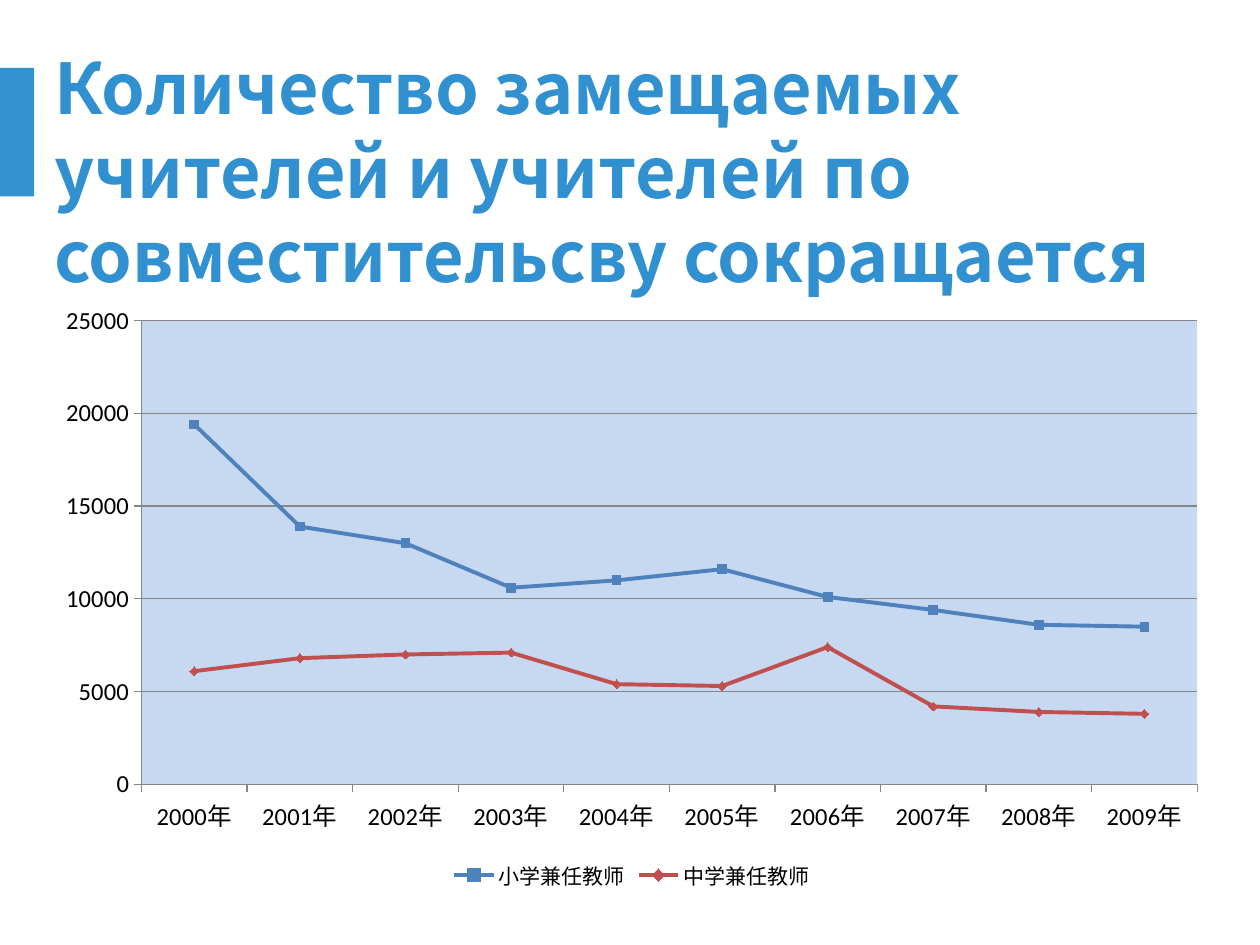
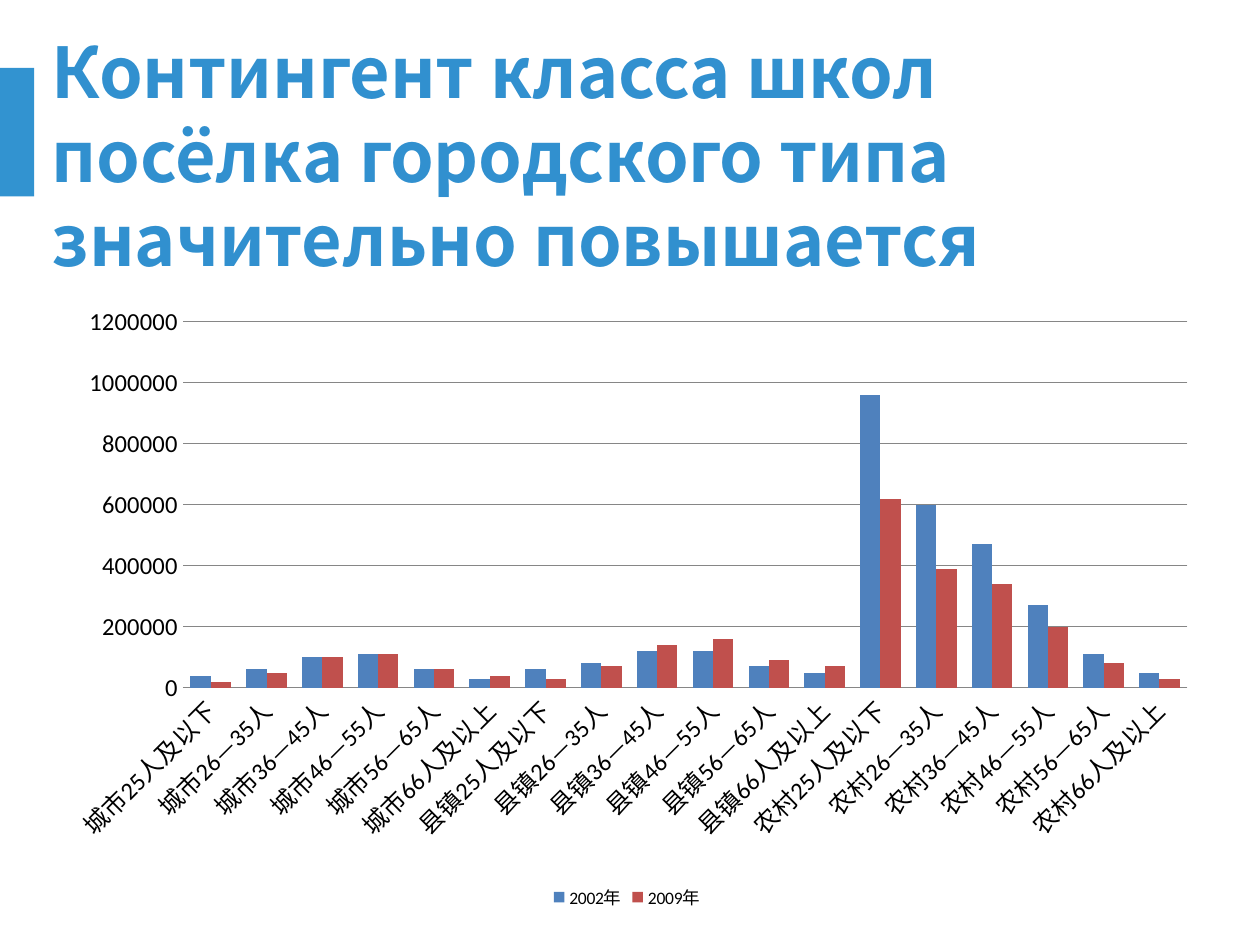
import pptx
import pptx.chart.data
import pptx.dml.color
import pptx.enum.chart
import pptx.enum.shapes
import pptx.enum.text
import pptx.oxml
import pptx.oxml.ns
import pptx.util
from pptx.util import Cm

BAND_COLOUR = "3293D0"
TITLE_COLOUR = "3190CF"
TEXT_COLOUR = "000000"
AXIS_COLOUR = "868686"
PLOT_COLOUR = "C6D9F1"
SERIES_COLOURS = ("4F81BD", "C0504D")
TITLE_FONT = "Noto Sans CJK SC"
CHART_FONT = "Calibri"
TITLE_ONLY = 5
INSET = Cm(0.13)
WIDE_INSET = Cm(1.82)

XL = pptx.enum.chart

YEARS = [f"{year}年" for year in range(2000, 2010)]
PART_TIME_TEACHERS = {
    "小学兼任教师": (19400, 13900, 13000, 10600, 11000, 11600, 10100, 9400, 8600, 8500),
    "中学兼任教师": (6100, 6800, 7000, 7100, 5400, 5300, 7400, 4200, 3900, 3800),
}
CLASS_SIZES = [
    area + size
    for area in ("城市", "县镇", "农村")
    for size in ("25人及以下", "26—35人", "36—45人", "46—55人", "56—65人", "66人及以上")
]
CLASS_COUNTS = {
    "2002年": (40000, 60000, 100000, 110000, 60000, 30000,
              60000, 80000, 120000, 120000, 70000, 50000,
              960000, 600000, 470000, 270000, 110000, 50000),
    "2009年": (20000, 50000, 100000, 110000, 60000, 40000,
              30000, 70000, 140000, 160000, 90000, 70000,
              620000, 390000, 340000, 200000, 80000, 30000),
}


def colour(value):
    return pptx.dml.color.RGBColor.from_string(value)


def paint(fill, value):
    fill.solid()
    fill.fore_color.rgb = colour(value)


def add_master_band(presentation, slide):
    """Draw the side band and move it to the master, behind everything."""
    band = slide.shapes.add_shape(
        pptx.enum.shapes.MSO_SHAPE.RECTANGLE, 0, Cm(1.37), Cm(0.69), Cm(2.59))
    band.shadow.inherit = False
    paint(band.fill, BAND_COLOUR)
    band.line.fill.background()
    presentation.slide_master.element.cSld.spTree.insert(2, band.element)


def set_title(slide, text, box, top_inset=INSET, bottom_inset=INSET):
    """Fill the title; unequal insets shift the vertically centred text."""
    title = slide.shapes.title
    title.left, title.top, title.width, title.height = box
    frame = title.text_frame
    frame.word_wrap = True
    frame.auto_size = pptx.enum.text.MSO_AUTO_SIZE.NONE
    frame.vertical_anchor = pptx.enum.text.MSO_ANCHOR.MIDDLE
    frame.margin_top, frame.margin_bottom = top_inset, bottom_inset
    paragraph = frame.paragraphs[0]
    paragraph.alignment = pptx.enum.text.PP_ALIGN.LEFT
    paragraph.line_spacing = pptx.util.Pt(48)
    run = paragraph.add_run()
    run.text = text
    run.font.name = TITLE_FONT
    run.font.size = pptx.util.Pt(40)
    run.font.bold = True
    run.font.color.rgb = colour(TITLE_COLOUR)


def set_font(font, size):
    font.name = CHART_FONT
    font.size = pptx.util.Pt(size)
    font.color.rgb = colour(TEXT_COLOUR)


def set_plot_layout(chart, x, y, w, h):
    """Fix the inner plot area as fractions of the chart."""
    plot_area = chart.element.chart.plotArea
    for layout in plot_area.findall(pptx.oxml.ns.qn("c:layout")):
        plot_area.remove(layout)
    parts = "".join(f'<c:{name} val="{value}"/>' for name, value in (
        ("layoutTarget", "inner"), ("xMode", "edge"), ("yMode", "edge"),
        ("x", x), ("y", y), ("w", w), ("h", h)))
    plot_area.insert(0, pptx.oxml.parse_xml(
        f'<c:layout {pptx.oxml.ns.nsdecls("c")}>'
        f"<c:manualLayout>{parts}</c:manualLayout></c:layout>"))


def add_chart(slide, kind, box, categories, series, legend_size, maximum, step, tick, layout):
    """Add a chart with the shared axes, gridlines and bottom legend."""
    data = pptx.chart.data.CategoryChartData()
    data.categories = categories
    for name, values in series.items():
        data.add_series(name, values)
    chart = slide.shapes.add_chart(kind, *box, data).chart
    chart.has_title = False
    set_font(chart.font, legend_size)
    chart.has_legend = True
    chart.legend.position = XL.XL_LEGEND_POSITION.BOTTOM
    chart.legend.include_in_layout = False
    for axis in (chart.category_axis, chart.value_axis):
        set_font(axis.tick_labels.font, 14)
        axis.major_tick_mark = tick
        axis.minor_tick_mark = XL.XL_TICK_MARK.NONE
        axis.format.line.color.rgb = colour(AXIS_COLOUR)
    value_axis = chart.value_axis
    value_axis.minimum_scale, value_axis.maximum_scale = 0, maximum
    value_axis.major_unit = step
    value_axis.has_major_gridlines = True
    value_axis.major_gridlines.format.line.color.rgb = colour(AXIS_COLOUR)
    chart.plots[0].vary_by_categories = False
    set_plot_layout(chart, *layout)
    return chart


def add_teacher_chart(slide, box):
    chart = add_chart(
        slide, XL.XL_CHART_TYPE.LINE_MARKERS, box, YEARS, PART_TIME_TEACHERS, 12,
        25000, 5000, XL.XL_TICK_MARK.OUTSIDE, (0.084, 0.045, 0.896, 0.77))
    markers = (XL.XL_MARKER_STYLE.SQUARE, XL.XL_MARKER_STYLE.DIAMOND)
    for series, value, style in zip(chart.plots[0].series, SERIES_COLOURS, markers):
        series.smooth = False
        series.format.line.color.rgb = colour(value)
        series.format.line.width = pptx.util.Pt(2.25)
        series.marker.style = style
        series.marker.size = 5
        paint(series.marker.format.fill, value)
        series.marker.format.line.color.rgb = colour(value)
    plot_area = chart.element.chart.plotArea
    plot_area.append(pptx.oxml.parse_xml(
        f'<c:spPr {pptx.oxml.ns.nsdecls("c", "a")}><a:solidFill>'
        f'<a:srgbClr val="{PLOT_COLOUR}"/></a:solidFill></c:spPr>'))


def add_class_size_chart(slide, box):
    chart = add_chart(
        slide, XL.XL_CHART_TYPE.COLUMN_CLUSTERED, box, CLASS_SIZES, CLASS_COUNTS, 10,
        1200000, 200000, XL.XL_TICK_MARK.NONE, (0.12, 0.045, 0.86, 0.59))
    chart.value_axis.format.line.fill.background()
    label_body = chart.category_axis._element.txPr.bodyPr
    label_body.set("rot", "-2700000")
    label_body.set("vert", "horz")
    plot = chart.plots[0]
    plot.gap_width = 75
    plot.overlap = 0
    for series, value in zip(plot.series, SERIES_COLOURS):
        paint(series.format.fill, value)
        series.invert_if_negative = False


def build_teacher_slide(slide):
    set_title(
        slide, "Количество замещаемых учителей и учителей по совместительсву сокращается",
        (Cm(0.84), Cm(1.24), Cm(24.56), Cm(2.72)), top_inset=WIDE_INSET)
    add_teacher_chart(slide, (Cm(0.86), Cm(5.92), Cm(23.75), Cm(12.14)))


def build_class_size_slide(slide):
    set_title(
        slide, "Контингент класса школ посёлка городского типа значительно повышается",
        (Cm(0.79), Cm(1.98), Cm(23.75), Cm(3.96)), bottom_inset=WIDE_INSET)
    add_class_size_chart(slide, (Cm(0.86), Cm(5.92), Cm(23.55), Cm(12.52)))


def main():
    presentation = pptx.Presentation()
    presentation.slide_width, presentation.slide_height = Cm(25.4), Cm(19.05)
    layout = presentation.slide_layouts[TITLE_ONLY]
    for build in (build_teacher_slide, build_class_size_slide):
        build(presentation.slides.add_slide(layout))
    add_master_band(presentation, presentation.slides[0])
    presentation.save("out.pptx")


if __name__ == "__main__":
    main()
